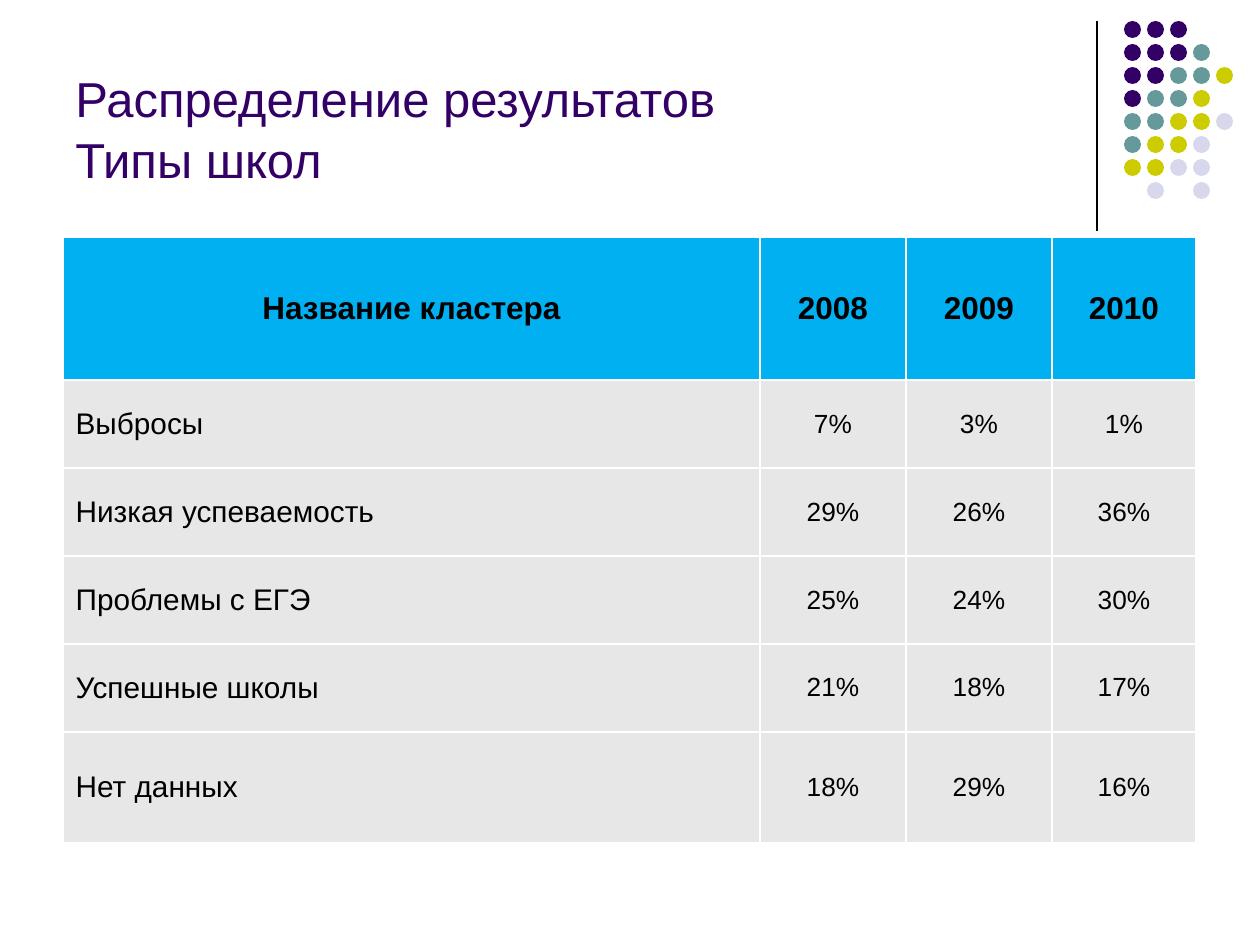
import pptx
import pptx.util
import pptx.dml.color
import pptx.enum.shapes
import pptx.enum.text
import pptx.oxml
import pptx.oxml.ns
from lxml import etree

EMU_PER_PX = 914400 / 126
COLORS = {
    "purple": "330066", "teal": "669999", "olive": "CCCC00", "lilac": "D8D8EC",
    "header": "00B0F0", "body": "E7E7E7", "black": "000000", "white": "FFFFFF",
}
ALIGN = pptx.enum.text.PP_ALIGN
ANCHOR = pptx.enum.text.MSO_ANCHOR


def px(length):
    return pptx.util.Emu(round(length * EMU_PER_PX))


def color(name):
    return pptx.dml.color.RGBColor.from_string(COLORS[name])


class SlideBuilder:
    font_name = "Arial"
    hanging_indent = 48

    def __init__(self, slide):
        self.slide = slide

    def add_run(self, paragraph, text, size, color_name, bold=False):
        run = paragraph.add_run()
        run.text = text
        run.font.name = self.font_name
        run.font.size = pptx.util.Pt(size)
        run.font.bold = bold
        run.font.color.rgb = color(color_name)

    def add_line(self, x1, y1, x2, y2, width):
        line = self.slide.shapes.add_connector(
            pptx.enum.shapes.MSO_CONNECTOR.STRAIGHT, px(x1), px(y1), px(x2), px(y2))
        line.line.color.rgb = color("black")
        line.line.width = pptx.util.Pt(width)
        properties = line._element.spPr
        etree.SubElement(properties, pptx.oxml.ns.qn("a:effectLst"))

    def add_dot(self, group, left, top, diameter, color_name):
        dot = group.shapes.add_shape(
            pptx.enum.shapes.MSO_SHAPE.OVAL, px(left), px(top), px(diameter), px(diameter))
        dot.shadow.inherit = False
        dot.fill.solid()
        dot.fill.fore_color.rgb = color(color_name)
        dot.line.fill.background()

    def add_dot_grid(self, left, top, pitch, diameter, pattern, key):
        group = self.slide.shapes.add_group_shape()
        for row, letters in enumerate(pattern):
            for column, letter in enumerate(letters):
                if letter in key:
                    self.add_dot(group, left + column * pitch, top + row * pitch,
                                 diameter, key[letter])

    def add_title(self, left, top, width, height, lines, size):
        box = self.slide.shapes.add_textbox(px(left), px(top), px(width), px(height))
        frame = box.text_frame
        frame.word_wrap = True
        frame.vertical_anchor = ANCHOR.BOTTOM
        paragraph = frame.paragraphs[0]
        paragraph.line_spacing = 1.05
        for index, line in enumerate(lines):
            if index:
                paragraph.add_line_break()
            self.add_run(paragraph, line, size, "purple")

    def add_borders(self, cell):
        properties = cell._tc.get_or_add_tcPr()
        for index, side in enumerate(("lnL", "lnR", "lnT", "lnB")):
            properties.insert(index, pptx.oxml.parse_xml(
                f'<a:{side} {pptx.oxml.ns.nsdecls("a")} w="12700"><a:solidFill>'
                f'<a:srgbClr val="{COLORS["white"]}"/></a:solidFill></a:{side}>'))

    def fill_cell(self, cell, text, size, fill, align, bold):
        cell.fill.solid()
        cell.fill.fore_color.rgb = color(fill)
        cell.vertical_anchor = ANCHOR.MIDDLE
        self.add_borders(cell)
        paragraph = cell.text_frame.paragraphs[0]
        paragraph.alignment = align
        properties = paragraph._p.get_or_add_pPr()
        properties.set("marL", str(px(self.hanging_indent)))
        properties.set("indent", str(-px(self.hanging_indent)))
        self.add_run(paragraph, text, size, "black", bold)

    def add_table(self, left, top, widths, heights, rows):
        table = self.slide.shapes.add_table(
            len(rows), len(widths), px(left), px(top),
            px(sum(widths)), px(sum(heights))).table
        for column, width in zip(table.columns, widths):
            column.width = px(width)
        for row, height in zip(table.rows, heights):
            row.height = px(height)
        for r, values in enumerate(rows):
            for c, text in enumerate(values):
                header, label = r == 0, c == 0
                size = 18 if header else 17 if label else 15
                align = ALIGN.LEFT if label and not header else ALIGN.CENTER
                self.fill_cell(table.cell(r, c), text, size,
                               "header" if header else "body", align, header)


def main():
    presentation = pptx.Presentation()
    presentation.slide_width = px(1260)
    presentation.slide_height = px(945)
    builder = SlideBuilder(presentation.slides.add_slide(presentation.slide_layouts[6]))

    # Corner decoration: a rule and a grid of dots
    builder.add_line(1097, 21, 1097, 231, 0.75)
    builder.add_dot_grid(
        1124, 21, 23, 17,
        ["PPP", "PPPT", "PPTTO", "PTTO", "TTOOL", "TOOL", "OOLL", "-L-L"],
        {"P": "purple", "T": "teal", "O": "olive", "L": "lilac"})

    # Title
    builder.add_title(63, 16, 1040, 179, ["Распределение результатов", "Типы школ"], 28)

    # Share of schools in each cluster by year
    builder.add_table(63, 237, [697, 146, 146, 144], [143, 88, 88, 88, 88, 111], [
        ["Название кластера", "2008", "2009", "2010"],
        ["Выбросы", "7%", "3%", "1%"],
        ["Низкая успеваемость", "29%", "26%", "36%"],
        ["Проблемы с ЕГЭ", "25%", "24%", "30%"],
        ["Успешные школы", "21%", "18%", "17%"],
        ["Нет данных", "18%", "29%", "16%"],
    ])

    presentation.save("out.pptx")


if __name__ == "__main__":
    main()
